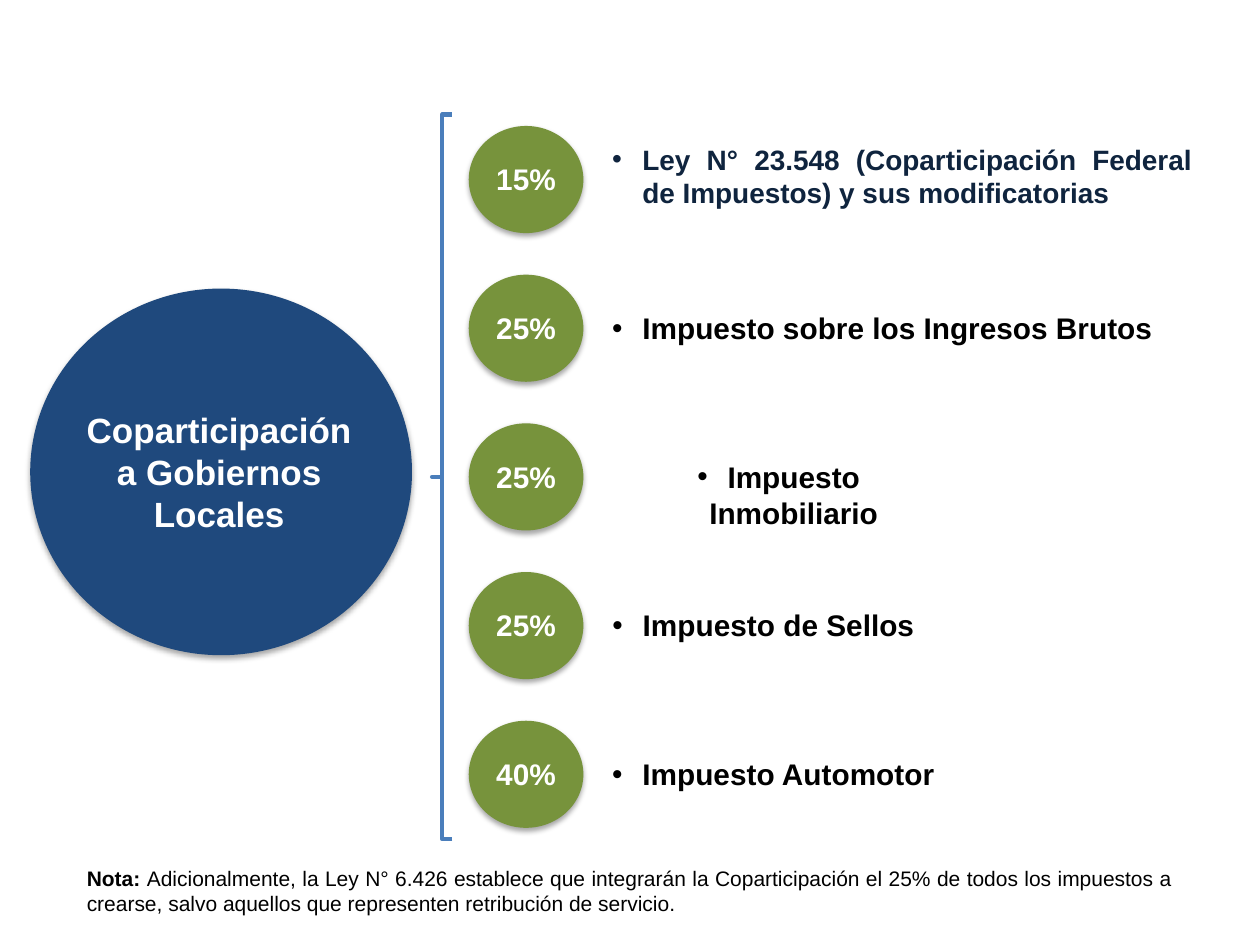
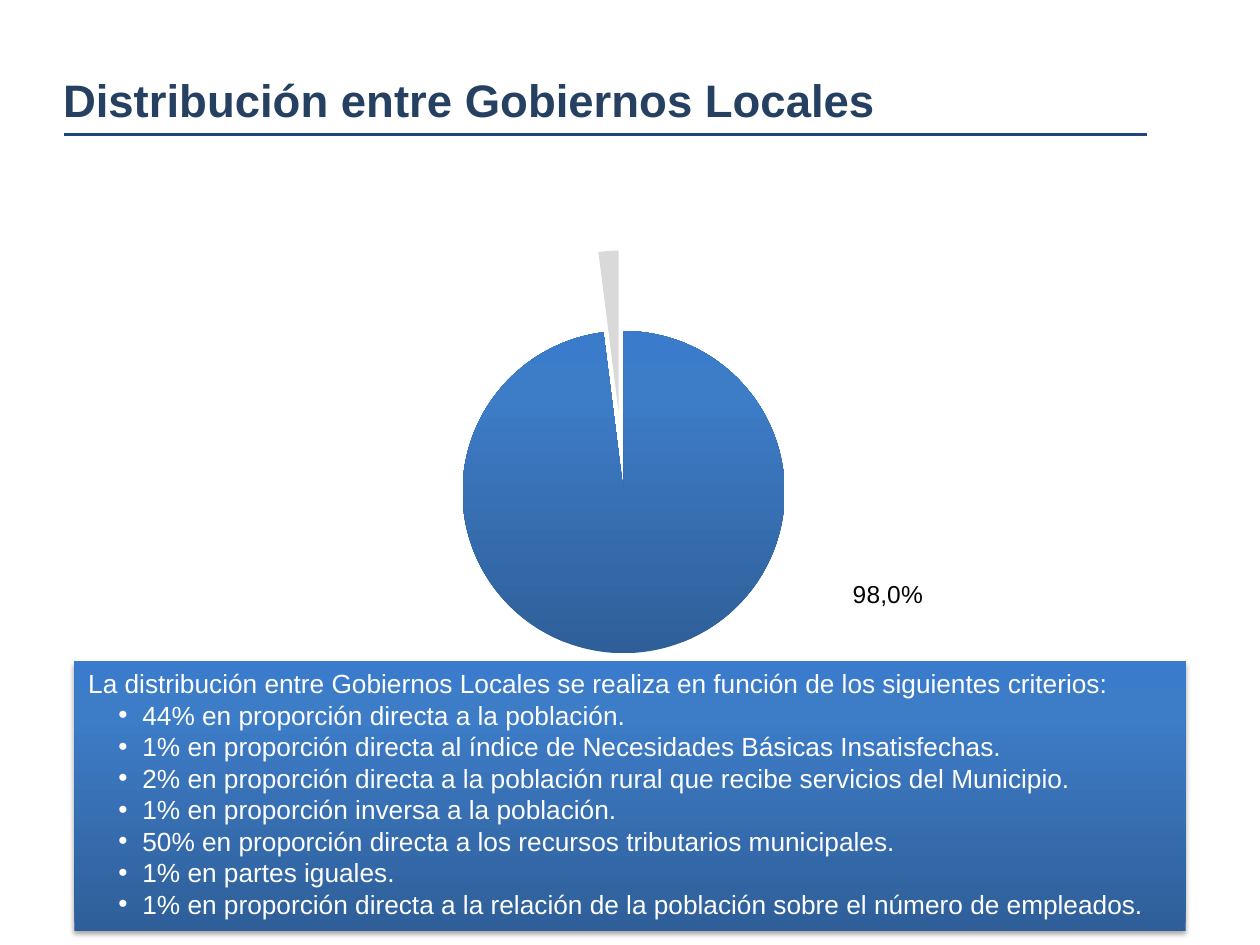
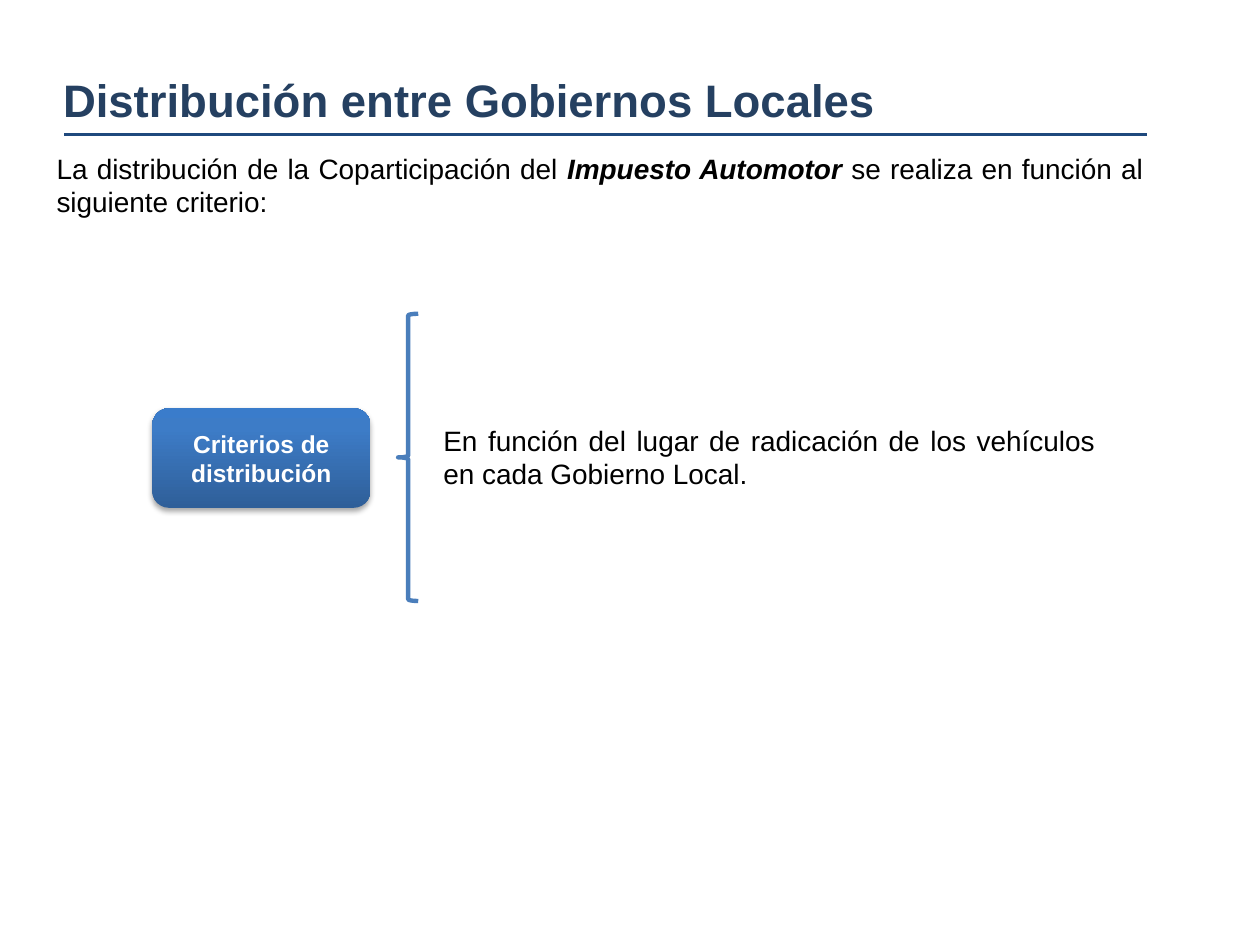
from copy import deepcopy

from pptx import Presentation
from pptx import util as u
from pptx.chart import data as cd
from pptx.dml.color import RGBColor
from pptx.enum import chart as ce, shapes as es, text as et
from pptx.oxml import parse_xml
from pptx.oxml.ns import nsdecls, qn

FONT = "Arial"
NAVY, TITLE, INK = "1F497D", "254061", "0F243E"
GREEN, BLUE, GRAY = "77933C", "4A7EBB", "D9D9D9"
BLEND = [(0, "2F5F99"), (0.8, "3D7CC7"), (1, "3A7CCB")]
BLACK, WHITE = "000000", "FFFFFF"
LEFT, MID, JUST = et.PP_ALIGN.LEFT, et.PP_ALIGN.CENTER, et.PP_ALIGN.JUSTIFY
KIND = es.MSO_SHAPE

HEAD = "Distribución entre Gobiernos Locales"
HUB = "Coparticipación a Gobiernos Locales"
# share, tax, text box (width, height), format
TAXES = [
    ("15%", "Ley N° 23.548 (Coparticipación Federal de Impuestos) y sus modificatorias",
     (4.8, 0.64), dict(size=16, color=INK)),
    ("25%", "Impuesto sobre los Ingresos Brutos", (4.49, 0.39), {}),
    ("25%", "Impuesto Inmobiliario", (2.84, 0.38), dict(align=MID)),
    ("25%", "Impuesto de Sellos", (2.6, 0.39), dict(align=MID)),
    ("40%", "Impuesto Automotor", (3.78, 0.38), {}),
]
NOTE = [("Nota: ", dict(bold=True)),
        ("Adicionalmente, la Ley N° 6.426 establece que integrarán la Coparticipación "
         "el 25% de todos los impuestos a crearse, salvo aquellos que representen "
         "retribución de servicio.", {})]
SHARES = [("1", 0.98), ("2", 0.02)]
RULE = "La distribución entre Gobiernos Locales se realiza en función de los siguientes criterios:"
RULES = [
    "44% en proporción directa a la población.",
    "1% en proporción directa al índice de Necesidades Básicas Insatisfechas.",
    "2% en proporción directa a la población rural que recibe servicios del Municipio.",
    "1% en proporción inversa a la población.",
    "50% en proporción directa a los recursos tributarios municipales.",
    "1% en partes iguales.",
    "1% en proporción directa a la relación de la población sobre el número de empleados.",
]
INTRO = [("La distribución de la Coparticipación del ", {}),
         ("Impuesto Automotor ", dict(bold=True, italic=True)),
         ("se realiza en función al siguiente criterio:", {})]
BASIS = "En función del lugar de radicación de los vehículos en cada Gobierno Local."


def rgb(code):
    return RGBColor.from_string(code)


def inches(*nums):
    return [u.Inches(n) for n in nums]


def style(font, size, color, bold=False, italic=False, name=FONT):
    font.name, font.size = name, u.Pt(size)
    font.bold, font.italic = bold, italic
    font.color.rgb = rgb(color)


def bullet(para, left, hang):
    props = para._p.get_or_add_pPr()
    props.set("marL", str(u.Inches(left)))
    props.set("indent", str(-u.Inches(hang)))
    props.append(parse_xml(f'<a:buFont {nsdecls("a")} typeface="Arial"/>'))
    props.append(parse_xml(f'<a:buChar {nsdecls("a")} char="•"/>'))


def write(para, words, size=16, color=BLACK, bold=False, align=LEFT, mark=None):
    """Fill a paragraph with a string or (text, format) runs; mark is (indent, hang)."""
    if mark:
        bullet(para, *mark)
    para.alignment = align
    for part, look in [(words, {})] if isinstance(words, str) else words:
        run = para.add_run()
        run.text = part
        style(run.font, size, color, **{"bold": bold, **look})


def label(slide, box, words, **look):
    frame = slide.shapes.add_textbox(*inches(*box)).text_frame
    frame.word_wrap = True
    write(frame.paragraphs[0], words, **{"align": JUST, **look})


def blend(fill):
    fill.gradient()
    fill.gradient_angle = 90
    stops = fill.gradient_stops._gsLst
    stops.append(deepcopy(stops[-1]))
    for stop, (spot, color) in zip(fill.gradient_stops, BLEND):
        stop.position, stop.color.rgb = spot, rgb(color)


def block(slide, kind, box, fill=None, pads=(0.1, 0.05, 0.1, 0.05)):
    """Add a shadowed shape, blended when no fill is given; return its text frame."""
    shape = slide.shapes.add_shape(kind, *inches(*box))
    if fill:
        shape.fill.solid()
        shape.fill.fore_color.rgb = rgb(fill)
    else:
        blend(shape.fill)
    shape.line.fill.background()
    shape.shadow.inherit = False
    shape._element.spPr.find(qn("a:effectLst")).append(parse_xml(
        f'<a:outerShdw {nsdecls("a")} blurRad="40000" dist="23000" dir="5400000" '
        'rotWithShape="0"><a:srgbClr val="000000"><a:alpha val="35000"/>'
        '</a:srgbClr></a:outerShdw>'))
    frame = shape.text_frame
    frame.word_wrap = True
    frame.vertical_anchor = et.MSO_ANCHOR.MIDDLE
    (frame.margin_left, frame.margin_top,
     frame.margin_right, frame.margin_bottom) = inches(*pads)
    return frame


def brace(slide, box, bend=None):
    shape = slide.shapes.add_shape(KIND.LEFT_BRACE, *inches(*box))
    shape.fill.background()
    shape.line.color.rgb, shape.line.width = rgb(BLUE), u.Pt(2.5)
    shape.shadow.inherit = False
    if bend is not None:
        shape.adjustments[0] = bend


def titled(deck):
    slide = deck.slides.add_slide(deck.slide_layouts[5])
    line = slide.shapes.add_connector(es.MSO_CONNECTOR.STRAIGHT,
                                      *inches(0.51, 1.07, 9.1, 1.07))
    line.line.color.rgb, line.line.width = rgb(NAVY), u.Pt(1.5)
    line._element.spPr.append(parse_xml(f'<a:effectLst {nsdecls("a")}/>'))
    title = slide.shapes.title
    title.left, title.top, title.width, title.height = inches(0.4, 0.52, 8.82, 0.54)
    frame = title.text_frame
    frame.auto_size = et.MSO_AUTO_SIZE.NONE
    frame.vertical_anchor = et.MSO_ANCHOR.TOP
    write(frame.paragraphs[0], HEAD, size=26, color=TITLE, bold=True)
    return slide


def taxes(deck):
    slide = deck.slides.add_slide(deck.slide_layouts[6])
    brace(slide, (3.43, 0.91, 0.16, 5.75), bend=0)
    for i, (share, name, (wide, high), look) in enumerate(TAXES):
        top = 1 + 1.18 * i
        disc = block(slide, KIND.OVAL, (3.72, top, 0.91, 0.85), GREEN,
                     (0.04, 0.04, 0.04, 0.05))
        write(disc.paragraphs[0], share, size=17, color=WHITE, bold=True, align=MID)
        # two-line first entry is centred on its disc, the others sit on its middle line
        label(slide, (4.76, top + (0.08 if i == 0 else 0.23), wide, high), name,
              **{"size": 17, "bold": True, "mark": (0.24, 0.24), **look})
    label(slide, (0.59, 6.82, 8.82, 0.5), NOTE, size=12)
    hub = block(slide, KIND.OVAL, (0.24, 2.29, 3.03, 2.91), NAVY, (0, 0.04, 0.03, 0.05))
    write(hub.paragraphs[0], HUB, size=20, color=WHITE, bold=True, align=MID)


def layout(tag, **spots):
    """Manual chart layout; tag is the layout target, or empty for a label offset."""
    inner = ""
    if tag:
        inner = (f'<c:layoutTarget val="{tag}"/>'
                 '<c:xMode val="edge"/><c:yMode val="edge"/>')
    inner += "".join(f'<c:{k} val="{v}"/>' for k, v in spots.items())
    return parse_xml(f'<c:layout {nsdecls("c")}><c:manualLayout>{inner}'
                     '</c:manualLayout></c:layout>')


def explode(node):
    node.addprevious(parse_xml(f'<c:explosion {nsdecls("c")} val="25"/>'))


def pie(slide):
    data = cd.CategoryChartData(number_format="0.0%")
    data.categories = [name for name, _ in SHARES]
    data.add_series("Series 1", [part for _, part in SHARES])
    chart = slide.shapes.add_chart(ce.XL_CHART_TYPE.PIE,
                                   *inches(0.35, 1.78, 9.16, 5.24), data).chart
    chart.has_legend = chart.has_title = False
    style(chart.font, 17.6, BLACK, name="Calibri")
    plot = chart.plots[0]
    plot.vary_by_categories = True
    area = chart._chartSpace.chart.plotArea
    for old in area.findall(qn("c:layout")):
        area.remove(old)
    area.insert(0, layout("inner", x=0, y=0.04, w=1, h=0.61))

    series = plot.series[0]
    big, small = (series.points[i] for i in range(2))
    blend(big.format.fill)
    small.format.fill.solid()
    small.format.fill.fore_color.rgb = rgb(GRAY)
    for point in (big, small):
        point.format.line.fill.background()
    spots = series._element.findall(qn("c:dPt"))
    explode(spots[0])
    for spot in spots:
        explode(spot.find(qn("c:spPr")))

    labels = series.data_labels
    labels.show_value = True
    labels.number_format, labels.number_format_is_linked = "0.0%", False
    style(labels.font, 14, WHITE, bold=True)
    tag = big.data_label
    write(tag.text_frame.paragraphs[0], "98,0%", size=14)
    tag.position = ce.XL_LABEL_POSITION.OUTSIDE_END
    node = labels._element.find(qn("c:dLbl"))
    node.find(qn("c:idx")).addnext(layout("", x=0.22, y=-0.12))
    node.addnext(parse_xml(f'<c:dLbl {nsdecls("c")}><c:idx val="1"/>'
                           '<c:delete val="1"/></c:dLbl>'))
    for lead in labels._element.findall(qn("c:showLeaderLines")):
        lead.set("val", "0")


def shares(deck):
    slide = titled(deck)
    pie(slide)
    frame = block(slide, KIND.RECTANGLE, (0.59, 5.25, 8.82, 2.14),
                  pads=(0.11, 0.05, 0.1, 0.05))
    frame.vertical_anchor = et.MSO_ANCHOR.TOP
    write(frame.paragraphs[0], RULE, size=15, color=WHITE, align=JUST)
    for rule in RULES:
        write(frame.add_paragraph(), rule, size=15, color=WHITE, align=JUST,
              mark=(0.43, 0.19))


def cars(deck):
    slide = titled(deck)
    label(slide, (0.35, 1.15, 8.82, 0.64), INTRO)
    label(slide, (3.42, 3.31, 5.37, 0.64), BASIS)
    frame = block(slide, KIND.ROUNDED_RECTANGLE, (1.21, 3.24, 1.73, 0.79))
    write(frame.paragraphs[0], "Criterios de distribución", size=14, color=WHITE,
          bold=True, align=MID)
    brace(slide, (3.16, 2.49, 0.16, 2.28))


def main():
    deck = Presentation()
    deck.slide_width, deck.slide_height = inches(10, 7.5)
    for build in (taxes, shares, cars):
        build(deck)
    deck.save("out.pptx")


if __name__ == "__main__":
    main()
